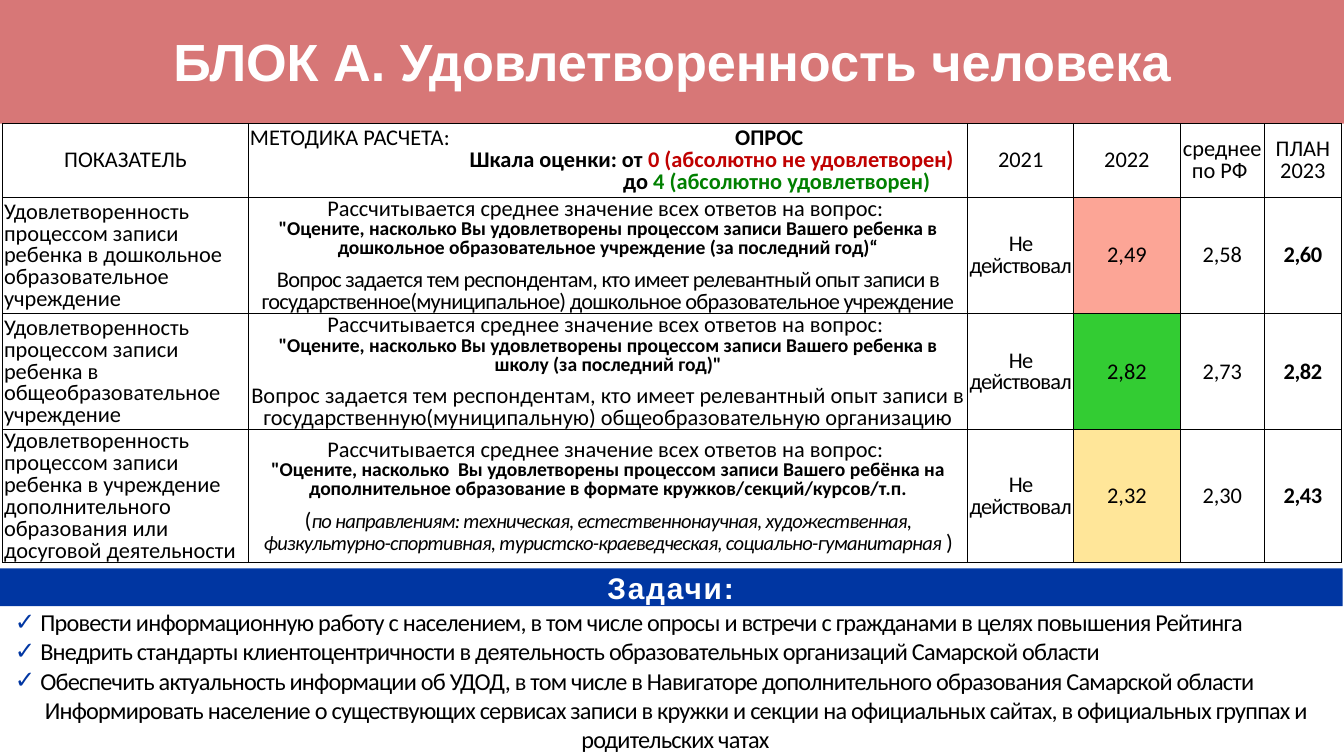
from lxml import etree
from pptx import Presentation
from pptx.dml.color import RGBColor
from pptx.enum.shapes import MSO_SHAPE
from pptx.enum.text import MSO_ANCHOR, PP_ALIGN
from pptx.oxml.ns import qn
from pptx.util import Inches, Pt

CENTER, LEFT = PP_ALIGN.CENTER, PP_ALIGN.LEFT
MIDDLE, TOP = MSO_ANCHOR.MIDDLE, MSO_ANCHOR.TOP
RECTANGLE = MSO_SHAPE.RECTANGLE

WHITE, BLACK, BLUE, ROSE = "FFFFFF", "000000", "0036A2", "D77777"
TIGHT = {"spacing": -0.4}
BOLD = {"bold": True}
QUESTION = {"bold": True, "size": 10.5}
HEADING = {"name": "Arial", "color": WHITE, "bold": True}


def rgb(value):
    return RGBColor.from_string(value)


def line(*spans, **layout):
    """One paragraph: spans are (text, format) pairs, layout is its placing."""
    return spans, layout


class SlideBuilder:
    base = {"name": "Calibri", "size": 12, "color": BLACK}

    def __init__(self, slide):
        self.slide = slide

    def span(self, para, text, style):
        values = {**self.base, **style}
        values["size"] = Pt(values["size"])
        span = para.add_run()
        span.text = text
        span.font.color.rgb = rgb(values.pop("color"))
        spacing = values.pop("spacing", 0)
        if spacing:
            span._r.get_or_add_rPr().set("spc", str(round(spacing * 100)))
        for name, value in values.items():
            setattr(span.font, name, value)

    def para(self, para, spans, align=CENTER, spacing=1.0, after=0, indent=0, bullet=None):
        layout = {"alignment": align, "line_spacing": spacing,
                  "space_before": Pt(0), "space_after": Pt(after)}
        for name, value in layout.items():
            setattr(para, name, value)
        props = para._p.get_or_add_pPr()
        props.set("marL", str(Inches(indent)))
        props.set("indent", str(-Inches(indent) if bullet else 0))
        if bullet:
            color = etree.SubElement(props, qn("a:buClr"))
            etree.SubElement(color, qn("a:srgbClr"), val=BLUE)
            etree.SubElement(props, qn("a:buChar"), char=bullet)
        else:
            etree.SubElement(props, qn("a:buNone"))
        for text, style in spans:
            self.span(para, text, style)

    def text(self, frame, lines, **common):
        for number, (spans, layout) in enumerate(lines):
            para = frame.add_paragraph() if number else frame.paragraphs[0]
            self.para(para, spans, **{**common, **layout})

    def place(self, box, left, top, width, height, anchor):
        sizes = {"left": left, "top": top, "width": width, "height": height}
        for name, value in sizes.items():
            setattr(box, name, Inches(value))
        box.text_frame.word_wrap = True
        box.text_frame.vertical_anchor = anchor

    def title(self, text, *place, fill):
        box = self.slide.shapes.title
        self.place(box, *place, MIDDLE)
        box.fill.solid()
        box.fill.fore_color.rgb = rgb(fill)
        self.text(box.text_frame, [line((text, {**HEADING, "size": 28}))])

    def band(self, text, *place, fill):
        box = self.slide.shapes.add_shape(RECTANGLE, *map(Inches, place))
        self.place(box, *place, MIDDLE)
        box.shadow.inherit = False
        box.fill.solid()
        box.fill.fore_color.rgb = rgb(fill)
        box.line.fill.background()
        self.text(box.text_frame, [line((text, {**HEADING, "size": 16, "spacing": 1}))])

    def body(self, lines, *place):
        box = self.slide.placeholders[1]
        self.place(box, *place, TOP)
        self.text(box.text_frame, lines)

    def cell(self, cell, lines, fill=None):
        margins = {"margin_left": 0.01, "margin_right": 0.01, "margin_top": 0.01, "margin_bottom": 0}
        for name, value in margins.items():
            setattr(cell, name, Inches(value))
        cell.vertical_anchor = MIDDLE
        props = cell._tc.get_or_add_tcPr()
        for side in ("lnL", "lnR", "lnT", "lnB"):
            border = etree.SubElement(props, qn(f"a:{side}"), w=str(Pt(0.5)))
            paint = etree.SubElement(border, qn("a:solidFill"))
            etree.SubElement(paint, qn("a:srgbClr"), val=BLACK)
        if fill:
            cell.fill.solid()
            cell.fill.fore_color.rgb = rgb(fill)
        else:
            cell.fill.background()
        self.text(cell.text_frame, lines, spacing=0.8)

    def table(self, rows, left, top, widths, heights):
        frame = self.slide.shapes.add_table(
            len(heights), len(widths), Inches(left), Inches(top),
            Inches(sum(widths)), Inches(sum(heights)))
        table = frame.table
        table.first_row = table.horz_banding = False
        for column, width in zip(table.columns, widths):
            column.width = Inches(width)
        for row, height, contents in zip(table.rows, heights, rows):
            row.height = Inches(height)
            for cell, (lines, fill) in zip(row.cells, contents):
                self.cell(cell, lines, fill)


def plain(text, fill=None, **style):
    return [line((text, style))], fill


# Header row: one widely tracked space sets the two headings apart
METHOD = [
    line(("МЕТОДИКА РАСЧЕТА:", {}), (" ", {"spacing": 150}), ("ОПРОС", BOLD), align=LEFT),
    line(("Шкала оценки: от ", BOLD),
         ("0 (абсолютно не удовлетворен) ", {"bold": True, "color": "C00000"}), indent=1.58),
    line(("до ", BOLD), ("4 (абсолютно удовлетворен)", {"bold": True, "color": "008000"}), indent=2.51),
]
HEADER = [plain("ПОКАЗАТЕЛЬ"), (METHOD, None), plain("2021"), plain("2022", WHITE),
          plain("среднее по РФ ", WHITE), plain("ПЛАН 2023")]

# Indicator: name, question, closing note, 2022 value and its colour, average, plan
INDICATORS = [
    ("Удовлетворенность процессом записи ребенка в дошкольное образовательное учреждение",
     "\"Оцените, насколько Вы удовлетворены процессом записи Вашего ребенка в "
     "дошкольное образовательное учреждение (за последний год)“",
     [("Вопрос задается тем респондентам, кто имеет релевантный опыт записи в "
       "государственное(муниципальное) дошкольное образовательное учреждение", TIGHT)],
     "2,49", "FCA596", "2,58", "2,60"),
    ("Удовлетворенность процессом записи ребенка в общеобразовательное учреждение",
     "\"Оцените, насколько Вы удовлетворены процессом записи Вашего ребенка в "
     "школу (за последний год)\"",
     [("Вопрос задается тем респондентам, кто имеет релевантный опыт записи в "
       "государственную(муниципальную) общеобразовательную организацию", {})],
     "2,82", "33CC33", "2,73", "2,82"),
    ("Удовлетворенность процессом записи ребенка в учреждение дополнительного "
     "образования или досуговой деятельности",
     "\"Оцените, насколько  Вы удовлетворены процессом записи Вашего ребёнка на "
     "дополнительное образование в формате кружков/секций/курсов/т.п.",
     [("(", TIGHT),
      ("по направлениям: техническая, естественнонаучная, художественная, "
       "физкультурно-спортивная, туристско-краеведческая, социально-гуманитарная ",
       {"size": 11, "italic": True, "spacing": -0.4}),
      (")", {})],
     "2,32", "FFE699", "2,30", "2,43"),
]


def indicator_row(name, question, note, current, fill, average, plan):
    method = [line(("Рассчитывается среднее значение всех ответов на вопрос: ", {})),
              line((question, QUESTION), after=6),
              line(*note)]
    return [([line((name, {}), align=LEFT)], None), (method, None),
            plain("Не действовал", **TIGHT), plain(current, fill),
            plain(average, WHITE), plain(plan, bold=True, spacing=-0.2)]


TASKS = [
    "Провести информационную работу с населением, в том числе опросы и встречи с гражданами "
    "в целях повышения Рейтинга",
    "Внедрить стандарты клиентоцентричности в деятельность образовательных организаций "
    "Самарской области",
    "Обеспечить актуальность информации об УДОД, в том числе в Навигаторе дополнительного "
    "образования Самарской области",
]
CLOSING = ("Информировать население о существующих сервисах записи в кружки и секции "
           "на официальных сайтах, в официальных группах и родительских чатах")


def main():
    deck = Presentation()
    deck.slide_width = Inches(10)
    deck.slide_height = deck.slide_width * 9 // 16
    page = SlideBuilder(deck.slides.add_slide(deck.slide_layouts[1]))

    page.title("БЛОК А. Удовлетворенность человека", 0, -0.02, 10, 0.94, fill=ROSE)

    # Indicators
    page.table([HEADER] + [indicator_row(*indicator) for indicator in INDICATORS], 0.02, 0.92,
               [1.83, 5.35, 0.79, 0.79, 0.63, 0.57], [0.55, 0.86, 0.86, 0.99])

    # Tasks
    page.band("Задачи:", -0.01, 4.23, 10, 0.28, fill=BLUE)
    style = {"size": 13, **TIGHT}
    tasks = [line((task, style), align=LEFT, indent=0.19, bullet="✓") for task in TASKS]
    page.body(tasks + [line((CLOSING, style))], 0.01, 4.47, 10.03, 1.37)

    deck.save("out.pptx")


if __name__ == "__main__":
    main()
